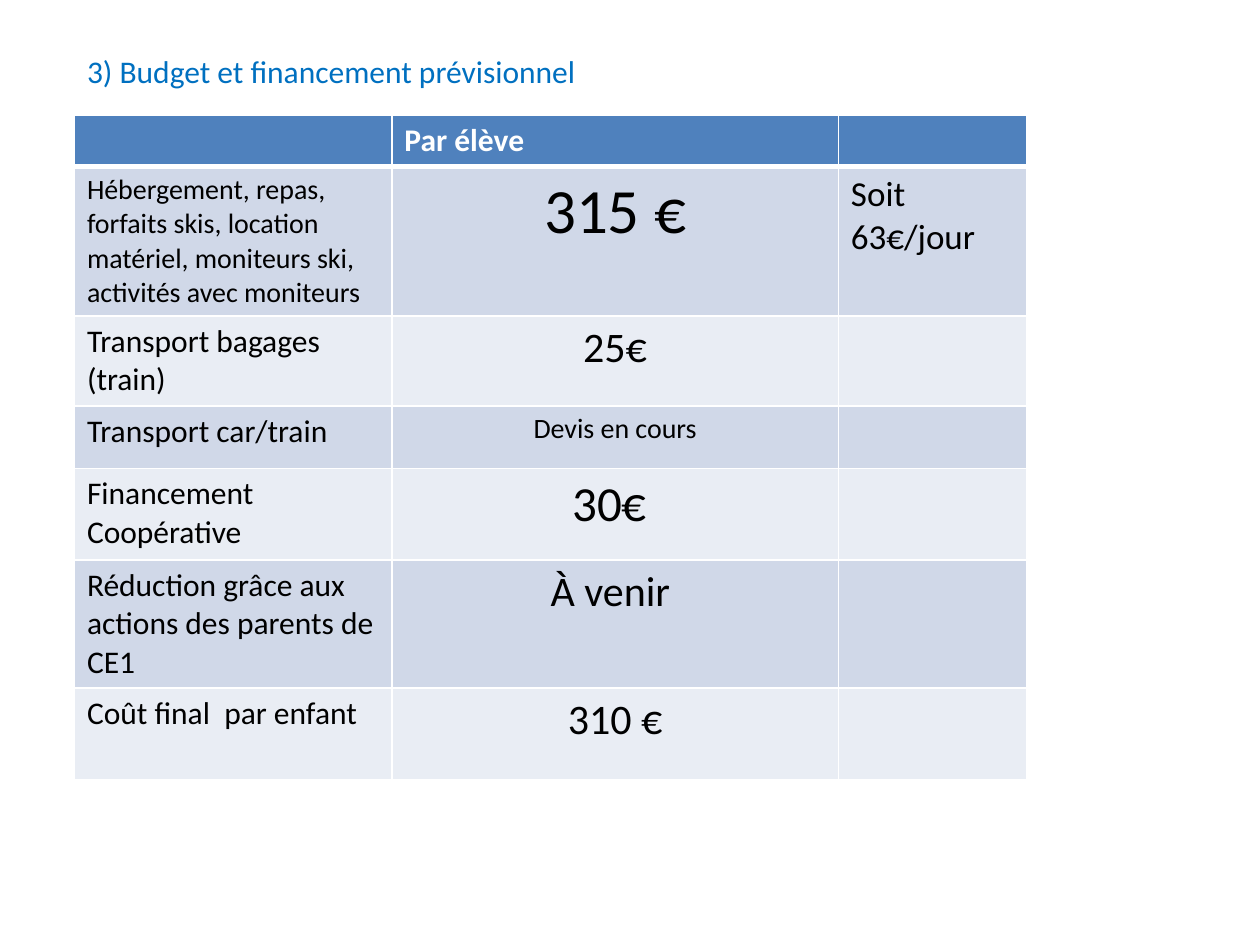
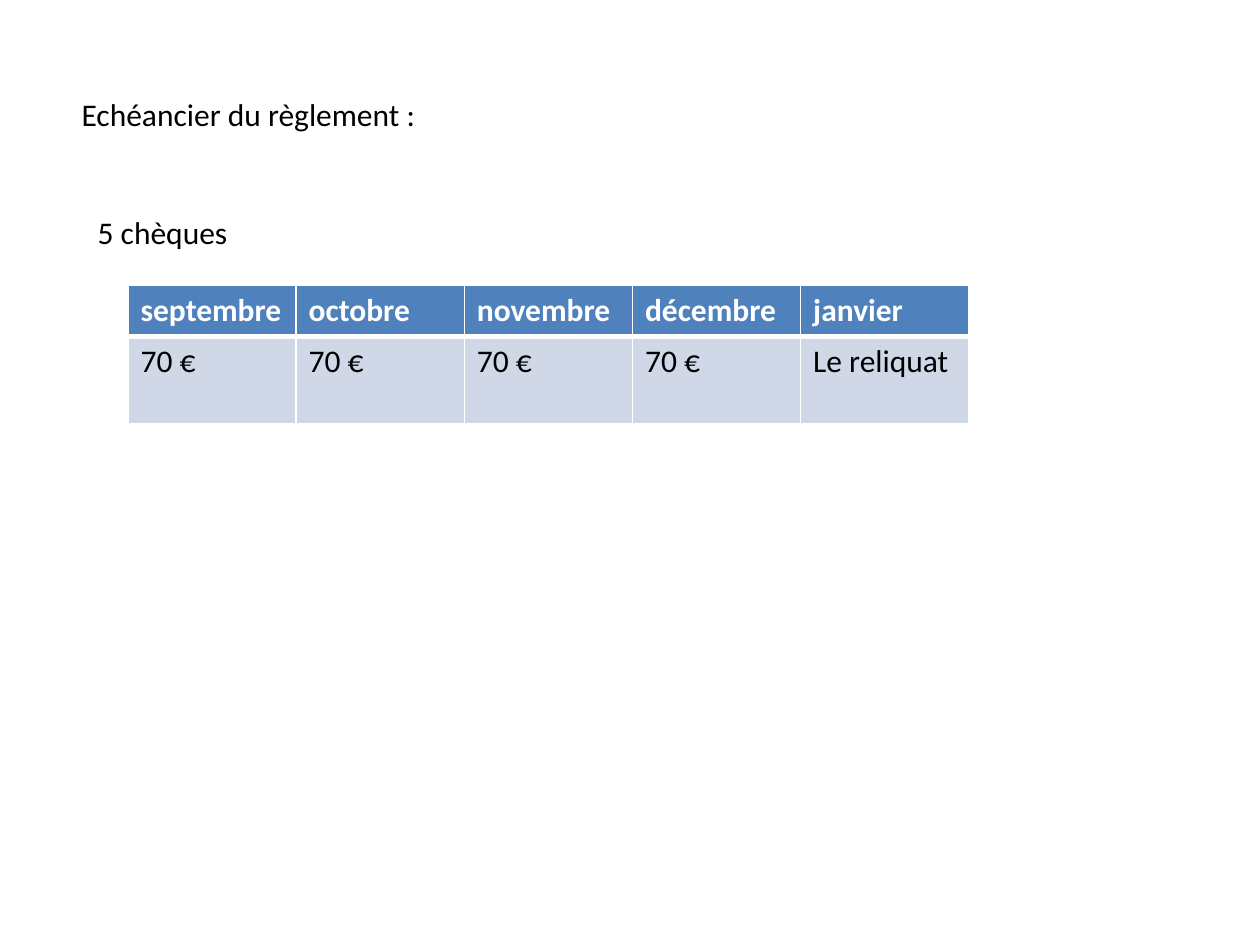
from lxml.etree import SubElement
from pptx import Presentation
from pptx.dml.color import RGBColor
from pptx.enum.text import MSO_ANCHOR as Anchor, MSO_AUTO_SIZE as AutoSize, PP_ALIGN as Align
from pptx.oxml.ns import qn
from pptx.util import Cm, Pt

# Shared style
FONT = "Calibri"
BLUE, BLACK, WHITE = "0070C0", "000000", "FFFFFF"
HEADER_FILL = "4F81BD"
BAND_FILLS = ["D0D8E8", "E9EDF4"]
TITLE_ONLY = 5

# Content: a cell is a text, or a text with its size
BUDGET = {
    "title": "3) Budget et financement prévisionnel",
    "header": ["", "Par élève", ""],
    "rows": [
        [("Hébergement, repas, forfaits skis, location matériel, moniteurs ski, "
          "activités avec moniteurs", 16), ("315 €", 36), ("Soit 63€/jour", 20)],
        ["Transport bagages (train)", ("25€", 24), ""],
        ["Transport car/train", ("Devis en cours", 16), ""],
        ["Financement Coopérative", ("30€ ", 28), ""],
        ["Réduction grâce aux actions des parents de CE1", ("À venir ", 24), ""],
        ["Coût final  par enfant", ("310 €", 24), ""],
    ],
    "widths": [6.4, 9, 3.8],
    "heights": [0.98, 2.98, 1.76, 1.26, 1.85, 2.52, 1.84],
}
SCHEDULE = {
    "title": "Echéancier du règlement :",
    "subtitle": "5 chèques",
    "header": ["septembre", "octobre", "novembre", "décembre", "janvier"],
    "rows": [["70 €"] * 4 + ["Le reliquat"]],
    "widths": [3.39] * 5,
    "heights": [0.98, 1.77],
}


def rgb(color):
    return RGBColor.from_string(color)


def write(frame, text, size=18, color=BLACK, bold=False, align=Align.LEFT):
    paragraph = frame.paragraphs[0]
    paragraph.alignment = align
    run = paragraph.add_run()
    run.text = text
    font = run.font
    font.name, font.size, font.bold = FONT, Pt(size), bold
    font.color.rgb = rgb(color)


def write_line(shape, text, left, top, width, **style):
    shape.left, shape.top, shape.width, shape.height = Cm(left), Cm(top), Cm(width), Cm(1.02)
    frame = shape.text_frame
    frame.word_wrap = True
    frame.auto_size = AutoSize.NONE
    frame.vertical_anchor = Anchor.TOP
    write(frame, text, **style)


def add_titled_slide(presentation, text, left, top, width, **style):
    slide = presentation.slides.add_slide(presentation.slide_layouts[TITLE_ONLY])
    write_line(slide.shapes.title, text, left, top, width, **style)
    return slide


def add_borders(cell, **widths):
    properties = cell._tc.get_or_add_tcPr()
    for side in "LRTB":
        line = SubElement(properties, qn(f"a:ln{side}"), w=str(Pt(widths.get(side, 1))))
        fill = SubElement(line, qn("a:solidFill"))
        SubElement(fill, qn("a:srgbClr"), val=WHITE)


def add_grid(slide, content, left, top, centred_column=None):
    widths, heights = content["widths"], content["heights"]
    table = slide.shapes.add_table(len(heights), len(widths), Cm(left), Cm(top),
                                   Cm(sum(widths)), Cm(sum(heights))).table
    table.first_row = table.horz_banding = False
    for column, width in zip(table.columns, widths):
        column.width = Cm(width)
    for row, height in zip(table.rows, heights):
        row.height = Cm(height)

    for i, values in enumerate([content["header"]] + content["rows"]):
        for j, value in enumerate(values):
            cell = table.cell(i, j)
            is_header = i == 0
            # The header and the first row share a thick rule
            add_borders(cell, **({"B": 3} if is_header else {"T": 3} if i == 1 else {}))
            cell.fill.solid()
            cell.fill.fore_color.rgb = rgb(HEADER_FILL if is_header else BAND_FILLS[(i - 1) % 2])
            text, size = value if isinstance(value, tuple) else (value, 18)
            if text:
                centred = j == centred_column and not is_header
                write(cell.text_frame, text, size=size, bold=is_header,
                      color=WHITE if is_header else BLACK,
                      align=Align.CENTER if centred else Align.LEFT)


def main():
    presentation = Presentation()
    presentation.slide_width, presentation.slide_height = Cm(25.4), Cm(19.05)

    # Budget
    slide = add_titled_slide(presentation, BUDGET["title"], 1.5, 0.92, 19.13, color=BLUE)
    add_grid(slide, BUDGET, 1.5, 2.33, centred_column=1)

    # Payment schedule
    slide = add_titled_slide(presentation, SCHEDULE["title"], 1.39, 1.78, 11.3)
    subtitle = slide.shapes.add_textbox(0, 0, 0, 0)
    write_line(subtitle, SCHEDULE["subtitle"], 1.72, 4.17, 13.3)
    add_grid(slide, SCHEDULE, 2.58, 5.75)

    presentation.save("out.pptx")


if __name__ == "__main__":
    main()
